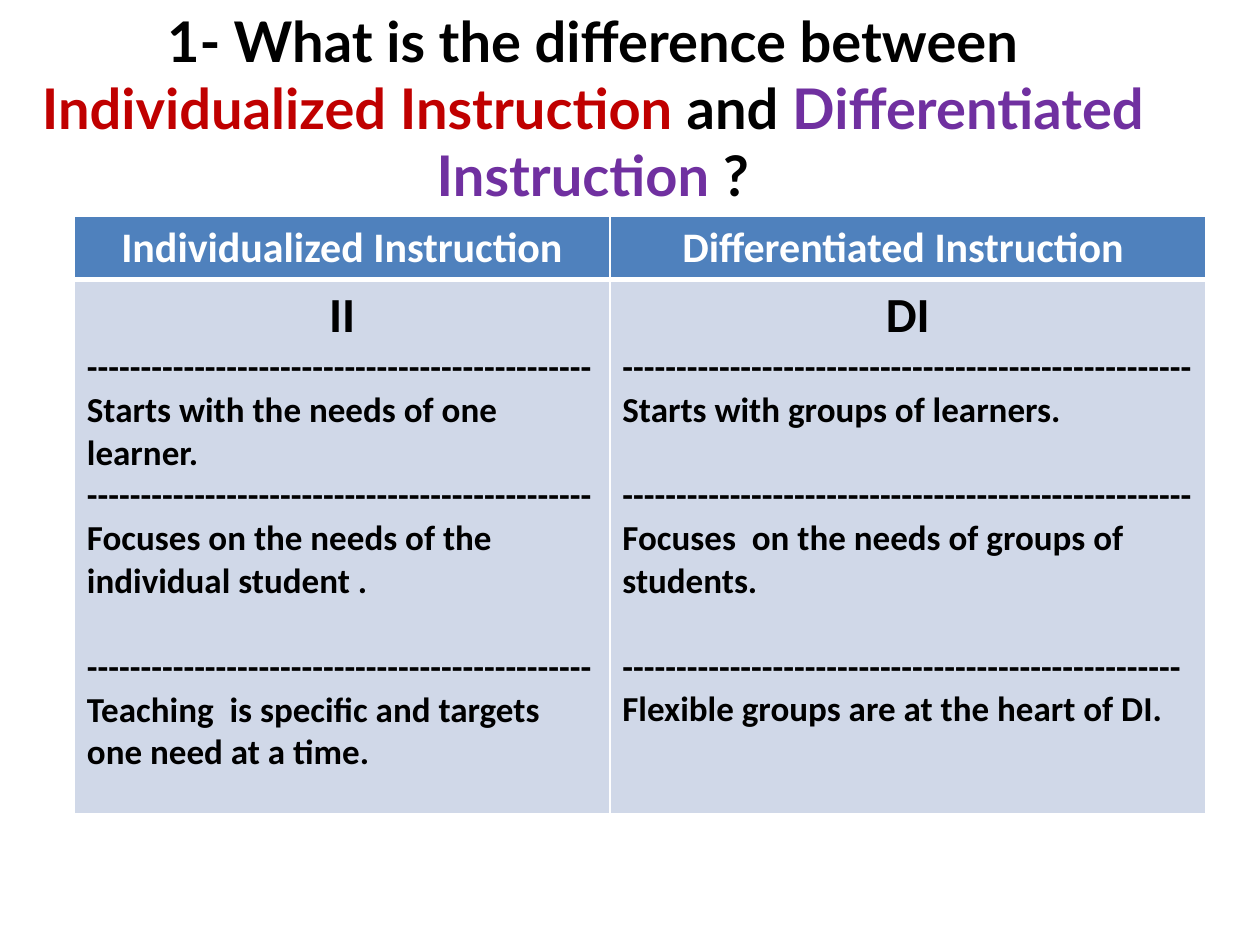
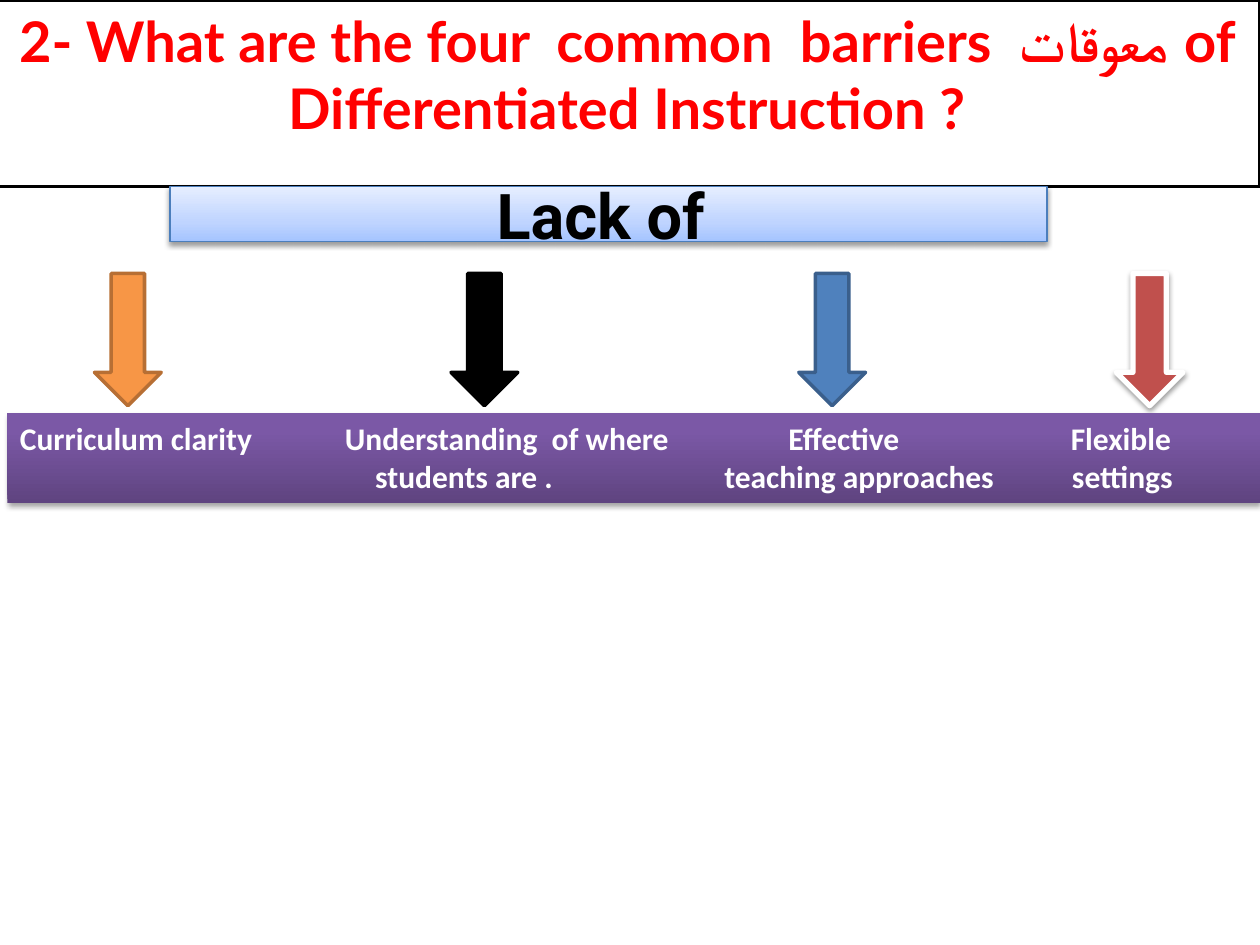
from dataclasses import dataclass

import lxml.etree
import pptx
import pptx.dml.color
import pptx.enum.shapes
import pptx.enum.text
import pptx.oxml.ns
import pptx.util

Inches = pptx.util.Inches
Pt = pptx.util.Pt
qn = pptx.oxml.ns.qn
ALIGN = pptx.enum.text.PP_ALIGN
ANCHOR = pptx.enum.text.MSO_ANCHOR
SHAPE = pptx.enum.shapes.MSO_SHAPE


@dataclass(frozen=True)
class Theme:
    title_font: str = "Lato"
    body_font: str = "Calibri"
    banner_font: str = "Roboto"
    title_size: int = 32
    banner_size: int = 36
    code_size: int = 28
    header_size: int = 24
    body_size: int = 20
    label_size: int = 18
    body_line: float = 24.4
    black: str = "000000"
    white: str = "FFFFFF"
    red: str = "FF0000"
    dark_red: str = "C00000"
    purple: str = "7030A0"
    blue: str = "4F81BD"
    pale_blue: str = "D0D8E8"
    banner_line: str = "4B7EBC"
    banner_stops: tuple = ((0, "A4C4FF"), (35, "BFD4FF"), (100, "E6EEFF"))
    band_stops: tuple = ((0, "5F4480"), (80, "7B58A6"), (100, "7C57A8"))


THEME = Theme()

# Each body entry: text, blank space above it in lines
COLUMNS = [
    ("Individualized Instruction", "II", 4.25, [
        ("-" * 47, 0),
        ("Starts with the needs of one  learner.", 0),
        ("-" * 47, 0),
        ("Focuses on the needs of the individual student .", 0),
        ("-" * 47, 1),
        ("Teaching  is specific and targets one need at a time.", 0),
    ]),
    ("Differentiated Instruction ", "DI", 4.73, [
        ("-" * 53, 0),
        ("Starts with groups of learners.", 0),
        ("-" * 53, 1),
        ("Focuses  on the needs of groups of students.", 0),
        ("-" * 52, 1),
        ("Flexible groups are at the heart of DI.", 0),
    ]),
]

# Left, fill, line colour, line width, shadow
ARROWS = [
    (0.75, "F79646", "B76F34", 2, False),
    (3.58, THEME.black, THEME.black, 2, False),
    (6.34, THEME.blue, "3A5F8C", 2, False),
    (8.86, "C0504D", THEME.white, 3, True),
]

# Each band line: text parts and the tab stops that place the later parts
BARRIER_LINES = [
    (["Curriculum clarity", "Understanding  of where", "Effective", "Flexible"],
     [2.58, 6.1, 8.34]),
    (["", "students are .", "teaching approaches", "settings"],
     [2.82, 5.59, 8.35]),
]


def rgb(colour):
    return pptx.dml.color.RGBColor.from_string(colour)


def set_font(font, name, size, colour):
    font.name, font.size, font.bold = name, Pt(size), True
    font.color.rgb = rgb(colour)


def add_child(parent, tag, **attributes):
    child = lxml.etree.SubElement(parent, qn(tag))
    for key, value in attributes.items():
        child.set(key, str(value))
    return child


def add_colour(parent, colour):
    return add_child(parent, "a:srgbClr", val=colour)


def add_box(page, kind, box, line=None, width=1):
    shape = page.shapes.add_shape(kind, *map(Inches, box))
    shape.shadow.inherit = False
    if line:
        shape.line.color.rgb = rgb(line)
        shape.line.width = Pt(width)
    else:
        shape.line.fill.background()
    shape.text_frame.word_wrap = True
    return shape


def fill_solid(shape, colour):
    shape.fill.solid()
    shape.fill.fore_color.rgb = rgb(colour)


def fill_gradient(shape, stops):
    """Run the stops from the bottom edge to the top edge."""
    shape.fill.gradient()
    shape.fill.gradient_angle = 90
    stop_list = shape.element.spPr.find(".//" + qn("a:gsLst"))
    for stop in list(stop_list):
        stop_list.remove(stop)
    for position, colour in stops:
        add_colour(add_child(stop_list, "a:gs", pos=position * 1000), colour)


def drop_shadow(shape, opacity=38, distance=1.6):
    effects = shape.element.spPr.find(qn("a:effectLst"))
    shadow = add_child(effects, "a:outerShdw", blurRad=Pt(3.1), dist=Pt(distance),
                       dir=90 * 60000, rotWithShape=0)
    add_child(add_colour(shadow, THEME.black), "a:alpha", val=opacity * 1000)


def write_title(frame, spans):
    frame.word_wrap = True
    frame.vertical_anchor = ANCHOR.TOP
    para = frame.paragraphs[0]
    para.alignment = ALIGN.CENTER
    for text, colour in spans:
        span = para.add_run()
        span.text = text
        set_font(span.font, THEME.title_font, THEME.title_size, colour)


def write_para(frame, index, text, size, colour, alignment):
    para = frame.paragraphs[0] if index == 0 else frame.add_paragraph()
    para.text = text
    para.alignment = alignment
    set_font(para.font, THEME.body_font, size, colour)
    return para


def style_cell(cell, fill, top, bottom):
    properties = cell._tc.get_or_add_tcPr()
    for side, width in (("L", 1), ("R", 1), ("T", top), ("B", bottom)):
        border = add_child(properties, f"a:ln{side}", w=Pt(width))
        add_colour(add_child(border, "a:solidFill"), THEME.white)
    fill_solid(cell, fill)


def add_comparison(page, box):
    left, top, width, height = box
    header_height = 0.49
    table = page.shapes.add_table(2, len(COLUMNS), *map(Inches, box)).table
    table.first_row = table.horz_banding = False
    table.rows[0].height = Inches(header_height)
    table.rows[1].height = Inches(height - header_height)
    for index, (heading, code, column_width, entries) in enumerate(COLUMNS):
        table.columns[index].width = Inches(column_width)
        header, body = table.cell(0, index), table.cell(1, index)
        style_cell(header, THEME.blue, 1, 3)
        style_cell(body, THEME.pale_blue, 3, 1)
        write_para(header.text_frame, 0, heading, THEME.header_size,
                   THEME.white, ALIGN.CENTER)
        write_para(body.text_frame, 0, code, THEME.code_size,
                   THEME.black, ALIGN.CENTER)
        for row, (text, blank_lines) in enumerate(entries, 1):
            para = write_para(body.text_frame, row, text, THEME.body_size,
                              THEME.black, ALIGN.LEFT)
            para.space_before = Pt(blank_lines * THEME.body_line)


def add_banner(page, box):
    banner = add_box(page, SHAPE.RECTANGLE, box, THEME.banner_line, 0.75)
    fill_gradient(banner, THEME.banner_stops)
    drop_shadow(banner)
    banner.text_frame.vertical_anchor = ANCHOR.MIDDLE
    para = banner.text_frame.paragraphs[0]
    para.text = "Lack of "
    para.alignment = ALIGN.CENTER
    set_font(para.font, THEME.banner_font, THEME.banner_size, THEME.black)


def add_arrows(page, top):
    for left, fill, line, width, shadowed in ARROWS:
        arrow = add_box(page, SHAPE.DOWN_ARROW, (left, top, 0.53, 1.05), line, width)
        fill_solid(arrow, fill)
        if shadowed:
            drop_shadow(arrow)


def add_barrier_band(page, box):
    band = add_box(page, SHAPE.RECTANGLE, box)
    fill_gradient(band, THEME.band_stops)
    drop_shadow(band, 35, 1.8)
    band.text_frame.vertical_anchor = ANCHOR.TOP
    for index, (parts, stops) in enumerate(BARRIER_LINES):
        para = write_para(band.text_frame, index, "\t".join(parts),
                          THEME.label_size, THEME.white, ALIGN.LEFT)
        properties = para._p.get_or_add_pPr()
        tabs = lxml.etree.Element(qn("a:tabLst"))
        for stop in stops:
            add_child(tabs, "a:tab", pos=Inches(stop), algn="l")
        properties.find(qn("a:defRPr")).addprevious(tabs)


def build_difference_page(page):
    title = page.shapes.add_textbox(*map(Inches, (0, 0, 9.41, 1.72)))
    write_title(title.text_frame, [
        ("1- What is the difference between ", THEME.black),
        ("Individualized Instruction ", THEME.dark_red),
        ("and ", THEME.black),
        ("Differentiated Instruction ", THEME.purple),
        ("?", THEME.black),
    ])
    add_comparison(page, (0.59, 1.72, 8.98, 4.73))


def build_barriers_page(page):
    title = add_box(page, SHAPE.RECTANGLE, (-0.05, 0, 10.05, 1.48), THEME.black, 2)
    fill_solid(title, THEME.white)
    write_title(title.text_frame, [
        ("2- What are the four  common  barriers  معوقات of Differentiated Instruction ?",
         THEME.red),
    ])
    add_arrows(page, 2.17)
    add_barrier_band(page, (0.06, 3.28, 9.94, 0.71))
    add_banner(page, (1.35, 1.48, 6.96, 0.44))


def main():
    deck = pptx.Presentation()
    deck.slide_width, deck.slide_height = Inches(10), Inches(7.5)
    for build in (build_difference_page, build_barriers_page):
        build(deck.slides.add_slide(deck.slide_layouts[6]))
    deck.save("out.pptx")


if __name__ == "__main__":
    main()
